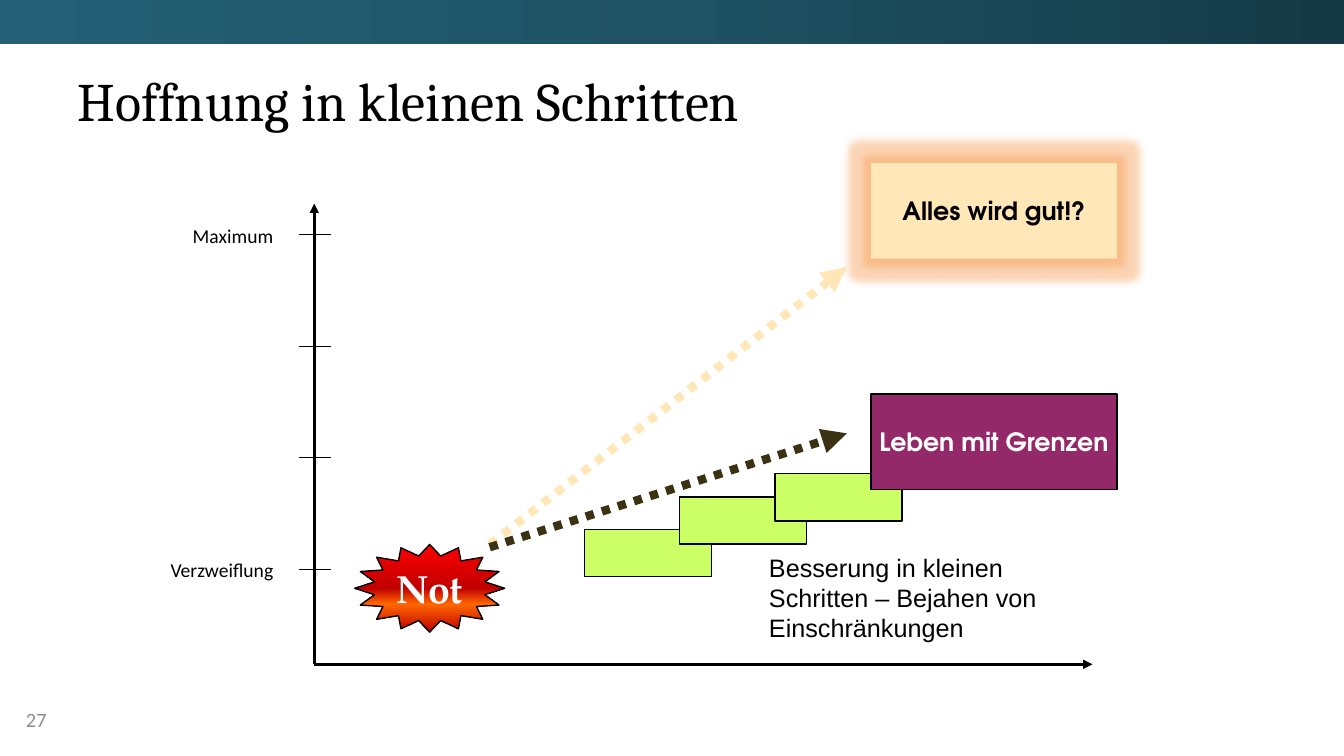
from lxml.etree import SubElement
from pptx import Presentation
from pptx.dml.color import RGBColor
from pptx.enum.dml import MSO_LINE
from pptx.enum.shapes import MSO_CONNECTOR, MSO_SHAPE
from pptx.enum.text import MSO_ANCHOR, PP_ALIGN
from pptx.oxml.ns import qn
from pptx.util import Cm, Pt

color = RGBColor.from_string


def write(box, text, font, size, ink, align=PP_ALIGN.CENTER, anchor=MSO_ANCHOR.MIDDLE, bold=False, wrap=True):
    frame = box.text_frame
    frame.word_wrap = wrap
    frame.vertical_anchor = anchor
    para = frame.paragraphs[0]
    para.alignment = align
    span = para.add_run()
    span.text = text
    span.font.name = font
    span.font.size = Pt(size)
    span.font.bold = bold
    span.font.color.rgb = color(ink)


def connect(start, end, ink, width, arrow=False, dash=None):
    line = page.shapes.add_connector(MSO_CONNECTOR.STRAIGHT, *map(Cm, start + end))
    line.line.color.rgb = color(ink)
    line.line.width = Pt(width)
    if dash:
        line.line.dash_style = dash
    if arrow:
        SubElement(line.line._get_or_add_ln(), qn("a:tailEnd"), type="triangle")
    SubElement(line._element.spPr, qn("a:effectLst"))


deck = Presentation()
deck.slide_width, deck.slide_height = Cm(33.87), Cm(19.05)
page = deck.slides.add_slide(deck.slide_layouts[5])

band = page.shapes.add_shape(MSO_SHAPE.RECTANGLE, 0, 0, deck.slide_width, Cm(1.12))
band.line.fill.background()

title = page.shapes.title
title.left, title.top, title.width, title.height = Cm(1.7), Cm(0.91), Cm(30.48), Cm(3.2)
write(title, "Hoffnung in kleinen Schritten", "Cambria", 38.7, "000000", PP_ALIGN.LEFT)

number = page.shapes.add_textbox(0, Cm(17.63), Cm(1.83), Cm(1.02))
write(number, "27", "Calibri", 14.5, "8C8C8C")

origin = (7.92, 16.74)
for axis_end in [(7.92, 5.13), (27.53, 16.74)]:
    connect(origin, axis_end, "000000", 2.25, arrow=True)

for index, label in enumerate(["Verzweiflung", "", "", "Maximum"]):
    tick = 14.35 - 2.81 * index
    connect((7.54, tick), (8.33, tick), "000000", 0.75)
    if label:
        box = page.shapes.add_textbox(Cm(3.94), Cm(tick - 0.41), Cm(3.2), Cm(0.84))
        write(box, label, "Calibri", 14, "000000", PP_ALIGN.RIGHT, MSO_ANCHOR.TOP)

connect((12.34, 13.72), (21.34, 6.73), "FFE7B7", 6, True, MSO_LINE.ROUND_DOT)

blocks = [
    (21.95, 4.11, 6.2, 2.41, "FFE7B7", "Alles wird gut!?", "000000"),
    (14.73, 13.34, 3.2, 1.19, "CCFF66", "", ""),
    (17.12, 12.52, 3.2, 1.19, "CCFF66", "", ""),
    (19.53, 11.94, 3.2, 1.19, "CCFF66", "", ""),
    (21.95, 9.93, 6.2, 2.41, "932968", "Leben mit Grenzen", "FFFFFF"),
]
for left, top, width, height, fill, text, ink in blocks:
    block = page.shapes.add_shape(MSO_SHAPE.RECTANGLE, Cm(left), Cm(top), Cm(width), Cm(height))
    block.shadow.inherit = False
    block.fill.solid()
    block.fill.fore_color.rgb = color(fill)
    block.line.color.rgb = color("000000")
    block.line.width = Pt(1)
    if text:
        write(block, text, "TeX Gyre Adventor", 18, ink, bold=True, wrap=False)
    if fill == "FFE7B7":
        block.line.fill.background()
        effects = block._element.spPr.find(qn("a:effectLst"))
        glow = SubElement(effects, qn("a:glow"), rad=str(Cm(0.39)))
        tint = SubElement(glow, qn("a:srgbClr"), val="F79646")
        SubElement(tint, qn("a:alpha"), val="40000")

note = page.shapes.add_textbox(Cm(19.13), Cm(13.79), Cm(8.2), Cm(2.54))
write(note, "Besserung in kleinen Schritten – Bejahen von Einschränkungen", "Arial", 18, "000000",
      PP_ALIGN.LEFT, MSO_ANCHOR.TOP)

connect((12.34, 13.79), (21.34, 10.92), "3A3213", 6, True, MSO_LINE.ROUND_DOT)

star = page.shapes.add_shape(MSO_SHAPE.STAR_16_POINT, Cm(8.94), Cm(13.72), Cm(3.78), Cm(2.21))
star.adjustments[0] = 0.375
star.line.color.rgb = color("000000")
star.line.width = Pt(1)
write(star, "Not", "TeX Gyre Pagella", 28, "FFFFFF", bold=True, wrap=False)

gradients = [
    (band, 180, [(0, "153A46"), (50, "1E5264"), (100, "246176")]),
    (star, 270, [(0, "FF0000"), (50, "C00000"), (68, "FF6600"), (100, "C00000")]),
]
for shape, angle, stops in gradients:
    shape.shadow.inherit = False
    shape.fill.gradient()
    shape.fill.gradient_angle = angle
    stop_list = shape._element.spPr.find(qn("a:gradFill")).find(qn("a:gsLst"))
    for old_stop in list(stop_list):
        stop_list.remove(old_stop)
    for position, tone in stops:
        stop = SubElement(stop_list, qn("a:gs"), pos=str(position * 1000))
        SubElement(stop, qn("a:srgbClr"), val=tone)

deck.save("out.pptx")
